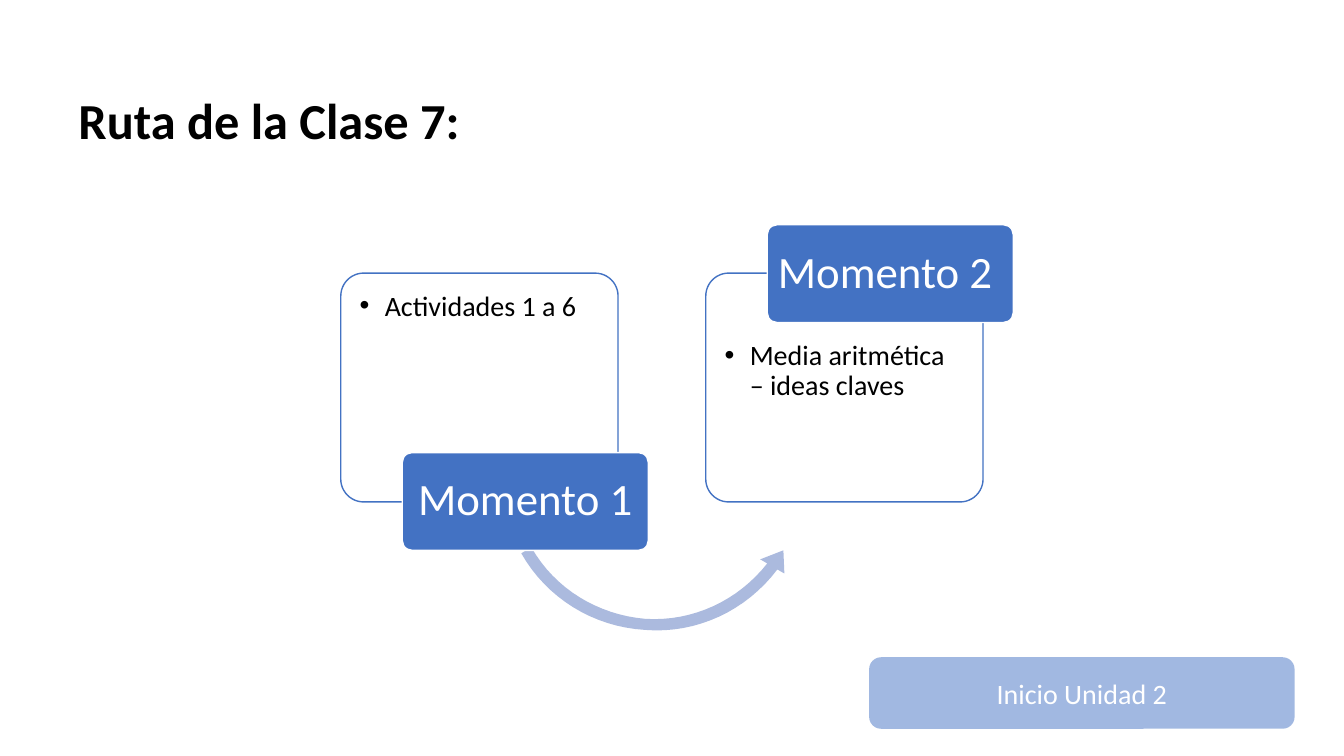
from lxml import etree
from pptx import Presentation
from pptx.dml.color import RGBColor
from pptx.enum.shapes import MSO_SHAPE
from pptx.enum.text import MSO_ANCHOR, PP_ALIGN
from pptx.oxml.ns import qn
from pptx.util import Inches, Pt

COLORS = {"blue": "4372C3", "button": "4472C4", "arrow": "ABBADE",
          "white": "FFFFFF", "black": "000000"}
FONT = "Calibri"
PANEL_SIZE = (2.75, 2.27)
TAG_SIZE = (2.44, 0.97)
PANEL_TOP = 2.71


def rgb(name):
    return RGBColor.from_string(COLORS[name])


def set_fill(sp, color, opacity=100):
    sp.fill.solid()
    sp.fill.fore_color.rgb = rgb(color)
    if opacity < 100:
        clr = sp.fill._xPr.find(qn("a:solidFill"))[0]
        etree.SubElement(clr, qn("a:alpha"), val=str(opacity * 1000))


def set_insets(tf, left, top, right, bottom):
    tf.margin_left, tf.margin_top = Inches(left), Inches(top)
    tf.margin_right, tf.margin_bottom = Inches(right), Inches(bottom)


def add_run(p, text, size, color, bold=False):
    r = p.add_run()
    r.text = text
    r.font.name = FONT
    r.font.size = Pt(size)
    r.font.bold = bold
    r.font.color.rgb = rgb(color)


def add_title(s, text):
    box = s.shapes.add_textbox(Inches(0.68), Inches(0.83), Inches(9.58), Inches(0.71))
    tf = box.text_frame
    tf.word_wrap = True
    add_run(tf.paragraphs[0], text, 36, "black", bold=True)


def add_round_box(s, left, top, size, fill, opacity=100, line=None, corner=0.1):
    width, height = size
    sp = s.shapes.add_shape(MSO_SHAPE.ROUNDED_RECTANGLE, Inches(left), Inches(top),
                            Inches(width), Inches(height))
    sp.shadow.inherit = False
    sp.adjustments[0] = corner
    set_fill(sp, fill, opacity)
    if line:
        sp.line.color.rgb = rgb(line)
        sp.line.width = Pt(1)
    else:
        sp.line.fill.background()
    sp.text_frame.word_wrap = True
    return sp


def add_centered_text(sp, text, size, spacing=1.0):
    tf = sp.text_frame
    tf.vertical_anchor = MSO_ANCHOR.MIDDLE
    p = tf.paragraphs[0]
    p.alignment = PP_ALIGN.CENTER
    p.line_spacing = spacing
    add_run(p, text, size, "white")


def add_panel(s, left, text, text_top):
    """Outlined panel with one bullet that starts text_top below its edge."""
    sp = add_round_box(s, left, PANEL_TOP, PANEL_SIZE, "white", 90, "blue")
    tf = sp.text_frame
    tf.vertical_anchor = MSO_ANCHOR.TOP
    set_insets(tf, 0.12, text_top, 0.13, 0.12)
    p = tf.paragraphs[0]
    p.alignment = PP_ALIGN.LEFT
    p.line_spacing = 0.9
    pPr = p._p.get_or_add_pPr()
    pPr.set("marL", str(Inches(0.25)))
    pPr.set("indent", str(-Inches(0.25)))
    etree.SubElement(pPr, qn("a:buFont"), typeface="Arial")
    etree.SubElement(pPr, qn("a:buChar"), char="•")
    add_run(p, text, 20, "black")


def add_tag(s, left, top, text):
    sp = add_round_box(s, left, top, TAG_SIZE, "blue", line="white")
    set_insets(sp.text_frame, 0.07, 0.04, 0.07, 0.04)
    add_centered_text(sp, text, 32, 0.9)


def bezier(a, b, c, d, steps=16):
    """Points along a cubic curve, without its start."""
    points = []
    for i in range(1, steps + 1):
        t = i / steps
        u = 1 - t
        points.append(tuple(u**3 * m + 3 * u * u * t * n + 3 * u * t * t * o + t**3 * q
                            for m, n, o, q in zip(a, b, c, d)))
    return points


def add_curved_arrow(s):
    start, inner, inner_low, inner_end = (5.17, 5.49), (5.27, 5.43), (6.4, 6.14), (7.61, 5.59)
    head = [(7.54, 5.55), (7.77, 5.46), (7.78, 5.69), (7.71, 5.65)]
    outer_low = (6.4, 6.25)
    points = [inner]
    points += bezier(inner, (5.5, 5.84), (5.93, 6.1), inner_low)
    points += bezier(inner_low, (6.87, 6.17), (7.32, 5.96), inner_end)
    points += head
    points += bezier(head[-1], (7.4, 6.06), (6.91, 6.29), outer_low)
    points += bezier(outer_low, (5.88, 6.22), (5.42, 5.93), start)
    builder = s.shapes.build_freeform(Inches(start[0]), Inches(start[1]))
    builder.add_line_segments([(Inches(x), Inches(y)) for x, y in points], close=True)
    sp = builder.convert_to_shape()
    sp.shadow.inherit = False
    set_fill(sp, "arrow")
    sp.line.fill.background()


def add_button(s, text):
    sp = add_round_box(s, 8.62, 6.52, (4.22, 0.71), "button", 50, corner=0.167)
    add_centered_text(sp, text, 20)


def main():
    prs = Presentation()
    prs.slide_width, prs.slide_height = Inches(13.33), Inches(7.5)
    s = prs.slides.add_slide(prs.slide_layouts[6])
    add_title(s, "Ruta de la Clase 7:")
    add_panel(s, 3.38, "Actividades 1 a 6", 0.12)
    add_curved_arrow(s)
    add_tag(s, 3.99, 4.49, "Momento 1")
    add_panel(s, 7, "Media aritmética – ideas claves", 0.61)
    add_tag(s, 7.61, 2.23, "Momento 2 ")
    add_button(s, "Inicio Unidad 2")
    prs.save("out.pptx")


if __name__ == "__main__":
    main()
